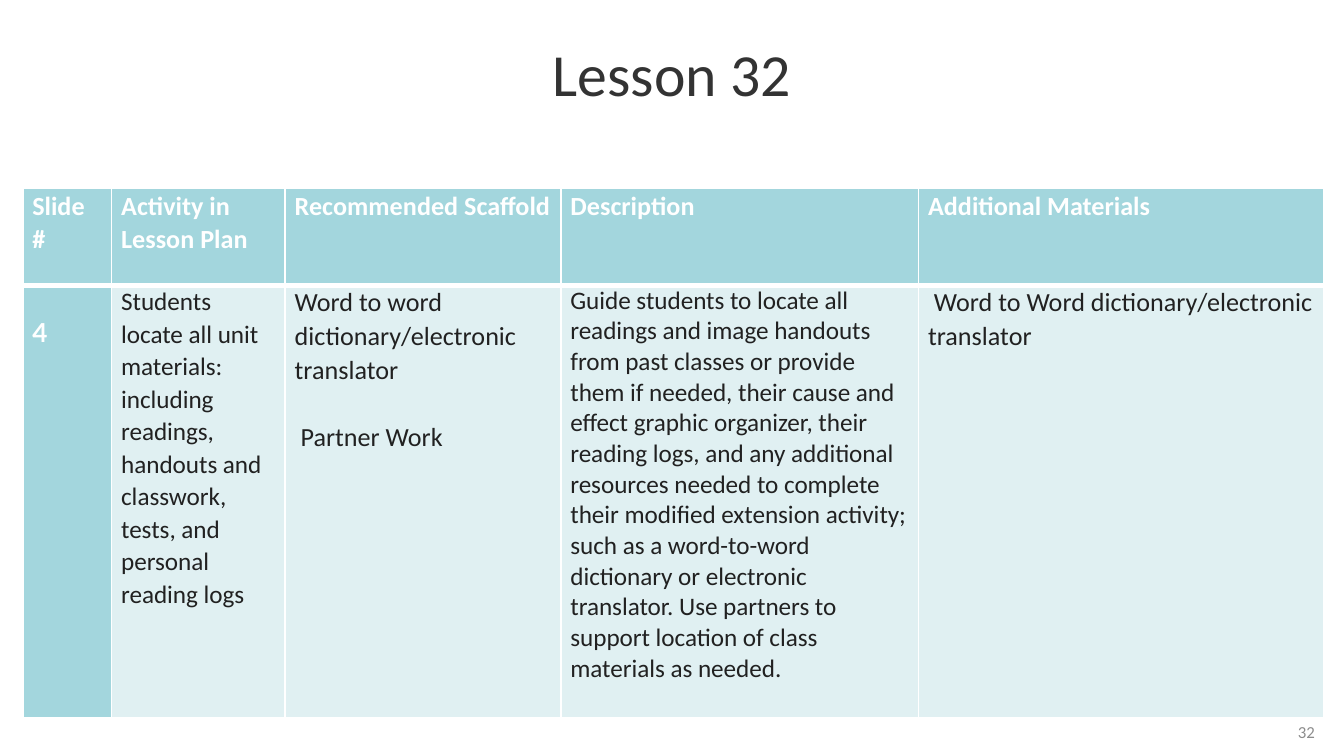
"""Build the Lesson 32 slide with its table of scaffolds and materials."""
from lxml.etree import SubElement
from pptx import Presentation
from pptx.dml.color import RGBColor
from pptx.enum.text import MSO_ANCHOR as Anchor, PP_ALIGN as Align
from pptx.oxml.ns import qn
from pptx.util import Cm, Pt

WHITE, TEAL, PALE, DARK = "FFFFFF", "A3D6DD", "E0F0F2", "212121"


def add_run(paragraph, text, size, color, bold=False, font="Calibri"):
    run = paragraph.add_run()
    run.text = text
    run.font.size = Pt(size)
    run.font.name = font
    run.font.bold = bold
    run.font.color.rgb = RGBColor.from_string(color)


def set_borders(cell, widths):
    properties = cell._tc.get_or_add_tcPr()
    for position, (side, width) in enumerate(widths.items()):
        line = SubElement(properties, qn(f"a:ln{side}"), w=str(Pt(width)))
        fill = SubElement(line, qn("a:solidFill"))
        SubElement(fill, qn("a:srgbClr"), val=WHITE)
        properties.insert(position, line)


presentation = Presentation()
presentation.slide_width = Cm(25.4)
presentation.slide_height = Cm(14.29)
slide = presentation.slides.add_slide(presentation.slide_layouts[5])

title = slide.shapes.title
title.left, title.top, title.width, title.height = Cm(0), Cm(0), Cm(25.4), Cm(2.92)
title.text_frame.vertical_anchor = Anchor.MIDDLE
paragraph = title.text_frame.paragraphs[0]
paragraph.alignment = Align.CENTER
paragraph.line_spacing = 0.9
add_run(paragraph, "Lesson 32", 32, "333333")

number_box = slide.shapes.add_textbox(Cm(18.9), Cm(13.34), Cm(6.2), Cm(0.97))
number_box.text_frame.word_wrap = True
number_box.text_frame.vertical_anchor = Anchor.MIDDLE
paragraph = number_box.text_frame.paragraphs[0]
paragraph.alignment = Align.RIGHT
add_run(paragraph, "32", 9, "8D8D8D")

headers = ["Slide #", "Activity in Lesson Plan", "Recommended Scaffold",
           "Description", "Additional Materials"]
activity = ("Students locate all unit materials: including readings, handouts and "
            "classwork, tests, and personal reading logs")
description = (
    "Guide students to locate all readings and image handouts from past classes or "
    "provide them if needed, their cause and effect graphic organizer, their reading "
    "logs, and any additional resources needed to complete their modified extension "
    "activity; such as a word-to-word dictionary or electronic translator. Use partners "
    "to support location of class materials as needed.")
body = [
    (["4"], 14, 2.0, 0),
    ([activity], 13.5, 1.06, 0),
    (["Word to word dictionary/electronic translator", "Partner Work"], 14, 1.06, 0),
    ([description], 13.5, 1.0, 0),
    (["Word to Word dictionary/electronic translator"], 14, 1.06, 0.11),
]
rows = [[([header], 14, 1.06, 0) for header in headers], body]
column_widths = [1.68, 3.28, 5.21, 6.76, 7.65]
row_heights = [1.83, 8.18]

frame = slide.shapes.add_table(2, 5, Cm(0.43), Cm(3.56),
                               Cm(sum(column_widths)), Cm(sum(row_heights)))
table = frame.table
table.horz_banding = False
for column, width in zip(table.columns, column_widths):
    column.width = Cm(width)

for row_index, (row, height) in enumerate(zip(rows, row_heights)):
    table.rows[row_index].height = Cm(height)
    for column_index, (texts, size, spacing, indent) in enumerate(row):
        is_heading = row_index == 0 or column_index == 0
        cell = table.cell(row_index, column_index)
        cell.margin_left = cell.margin_right = Cm(0.18)
        cell.margin_top = cell.margin_bottom = Cm(0)
        cell.fill.solid()
        cell.fill.fore_color.rgb = RGBColor.from_string(TEAL if is_heading else PALE)
        top, bottom = (1, 3) if row_index == 0 else (3, 1)
        set_borders(cell, {"L": 1, "R": 1, "T": top, "B": bottom})
        for index, text in enumerate(texts):
            text_frame = cell.text_frame
            paragraph = text_frame.add_paragraph() if index else text_frame.paragraphs[0]
            paragraph.line_spacing = spacing
            if index:
                paragraph.space_before = Pt(18)
            first_indent = 0.11 if index else indent
            if first_indent:
                paragraph._p.get_or_add_pPr().set("indent", str(Cm(first_indent)))
            add_run(paragraph, text, size, WHITE if is_heading else DARK, is_heading,
                    "Lato" if text == "4" else "Calibri")

presentation.save("out.pptx")
